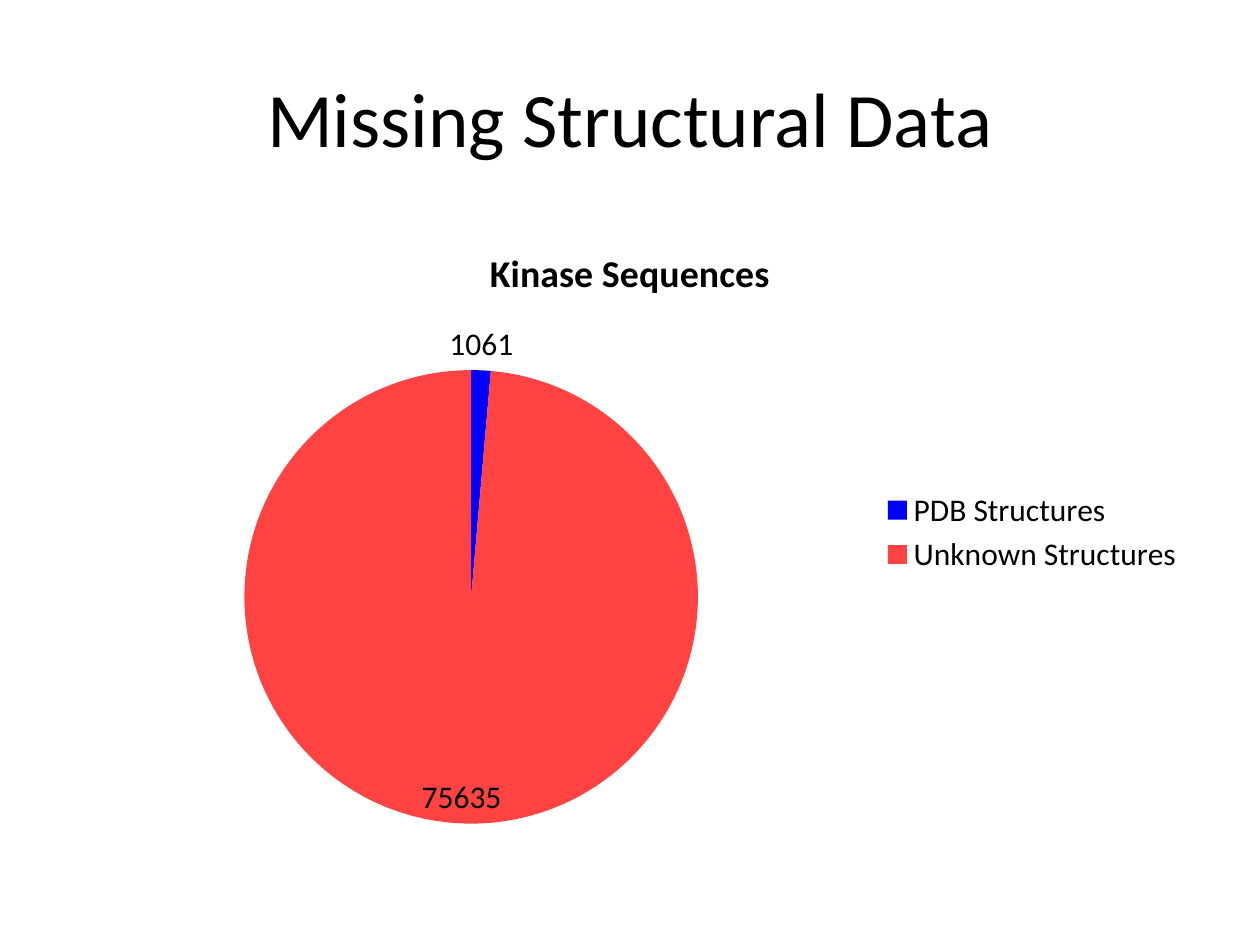
from lxml import etree
from pptx import Presentation
from pptx.chart.data import CategoryChartData
from pptx.dml.color import RGBColor
from pptx.enum.chart import XL_CHART_TYPE, XL_LABEL_POSITION, XL_LEGEND_POSITION
from pptx.enum.text import MSO_ANCHOR, PP_ALIGN
from pptx.oxml.ns import qn
from pptx.util import Inches, Pt

PIE = XL_CHART_TYPE.PIE
RIGHT = XL_LEGEND_POSITION.RIGHT
OUTSIDE_END = XL_LABEL_POSITION.OUTSIDE_END
INSIDE_END = XL_LABEL_POSITION.INSIDE_END
MIDDLE = MSO_ANCHOR.MIDDLE
CENTER = PP_ALIGN.CENTER

FONT = "Calibri"
BLACK = "000000"
SLICES = [
    ("PDB Structures", 1061, "0000FF", OUTSIDE_END),
    ("Unknown Structures", 75635, "FF4343", INSIDE_END),
]


def color(hex_string):
    return RGBColor.from_string(hex_string)


def set_font(font, size, bold=False):
    font.name = FONT
    font.size = Pt(size)
    font.bold = bold
    font.color.rgb = color(BLACK)


def place_title(slide, text, left, top, width, height):
    title = slide.shapes.title
    title.left, title.top, title.width, title.height = left, top, width, height
    title.text_frame.text = text
    title.text_frame.vertical_anchor = MIDDLE
    paragraph = title.text_frame.paragraphs[0]
    paragraph.alignment = CENTER
    set_font(paragraph.font, 44)


def set_plot_layout(chart, x, y, width, height):
    plot_area = chart.element.chart.plotArea
    for old_layout in plot_area.findall(qn("c:layout")):
        plot_area.remove(old_layout)
    layout = etree.Element(qn("c:layout"))
    manual = etree.SubElement(layout, qn("c:manualLayout"))
    settings = [
        ("layoutTarget", "inner"), ("xMode", "edge"), ("yMode", "edge"),
        ("x", x), ("y", y), ("w", width), ("h", height),
    ]
    for name, value in settings:
        etree.SubElement(manual, qn("c:" + name)).set("val", str(value))
    plot_area.insert(0, layout)


def place_pie(slide, name, left, top, width, height):
    chart_data = CategoryChartData()
    chart_data.categories = [slice_name for slice_name, *_ in SLICES]
    chart_data.add_series(name, [value for _, value, *_ in SLICES])
    chart = slide.shapes.add_chart(PIE, left, top, width, height, chart_data).chart
    set_font(chart.font, 18)

    chart.has_title = True
    chart.chart_title.text_frame.text = name
    set_font(chart.chart_title.text_frame.paragraphs[0].font, 21.6, bold=True)

    chart.has_legend = True
    chart.legend.position = RIGHT
    chart.legend.include_in_layout = False
    set_font(chart.legend.font, 18)

    plot = chart.plots[0]
    plot.vary_by_categories = True
    series = plot.series[0]
    series.data_labels.show_value = True
    set_font(series.data_labels.font, 18)
    for index, (_, _, fill, position) in enumerate(SLICES):
        point = series.points[index]
        point.format.fill.solid()
        point.format.fill.fore_color.rgb = color(fill)
        point.data_label.position = position

    diameter = Inches(3.6)
    set_plot_layout(chart, 0.16, 0.24, diameter / width, diameter / height)


def main():
    presentation = Presentation()
    presentation.slide_width = Inches(10)
    presentation.slide_height = Inches(7.5)
    slide = presentation.slides.add_slide(presentation.slide_layouts[5])
    left, width = Inches(0.5), Inches(9)
    place_title(slide, "Missing Structural Data", left, Inches(0.3), width, Inches(1.25))
    place_pie(slide, "Kinase Sequences", left, Inches(1.75), width, Inches(4.95))
    presentation.save("out.pptx")


if __name__ == "__main__":
    main()
